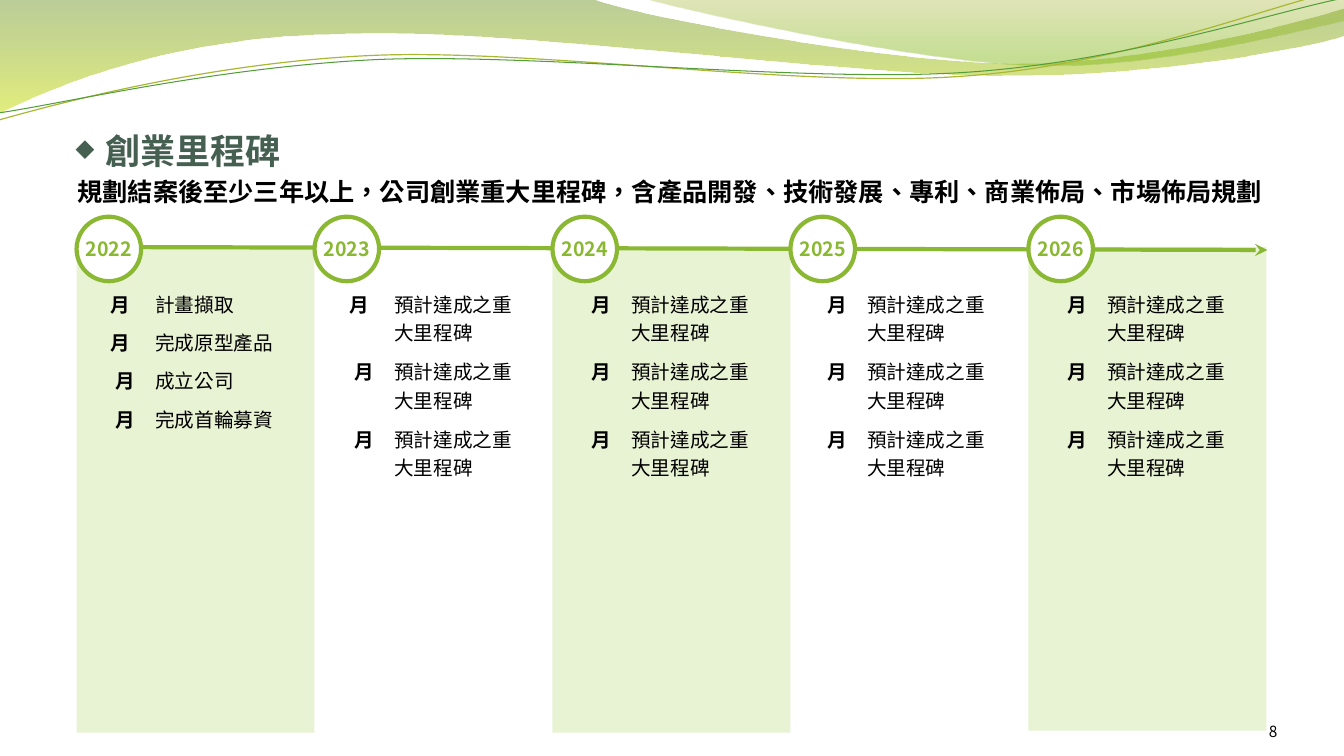
from lxml.etree import SubElement
from pptx import Presentation
from pptx.dml.color import RGBColor
from pptx.enum.shapes import MSO_CONNECTOR, MSO_SHAPE
from pptx.enum.text import MSO_ANCHOR, PP_ALIGN
from pptx.oxml.ns import qn
from pptx.util import Emu, Pt

EMU_PER_PX = 9144
FONT = "Noto Sans CJK SC"
LANGUAGE = "zh-TW"
NO_GRID_STYLE = "{2D5ABB26-0587-4C30-8999-92F81FD0307C}"
COLORS = {
    "title": "455F51", "text": "000000", "accent": "8AB833", "white": "FFFFFF",
    "band": "E8F3D4", "olive": "69921C", "lime": "CCE10F", "moss": "9BAA1A",
    "leaf": "81BA16", "gold_line": "A9B733", "green_line": "549E39",
}
LEFT, COLUMN_PITCH, CIRCLE_SIZE = 76, 236, 64
TABLE_ROWS, ROW_HEIGHT, TALL_ROW_HEIGHT, TABLE_COLUMNS = 8, 38, 67, (68, 153)
GOAL = "預計達成之重大里程碑"
MILESTONES = [
    ("2022", 76, [("月 ", "計畫擷取"), ("月 ", "完成原型產品"),
                  ("月", "成立公司"), ("月", "完成首輪募資")]),
    ("2023", 313, [("月 ", GOAL), ("月", GOAL), ("月", GOAL)]),
    ("2024", 548, [("月", GOAL)] * 3),
    ("2025", 782, [("月", GOAL)] * 3),
    ("2026", 1020, [("月", GOAL)] * 3),
]
BROAD_WAVE = [
    [(0, 0)], [(587, -1)], [(634, 17), (884, 63), (1011, 63)],
    [(1137, 63), (1277, 26), (1333, 9)], [(1334, 36)],
    [(1311, 44), (1159, 76), (994, 75)], [(829, 75), (509, 28), (343, 34)],
    [(172, 36), (61, 83), (-2, 113)],
]
RIGHT_WAVE = [
    [(638, -1)], [(679, 11), (909, 62), (1025, 65)],
    [(1140, 69), (1282, 32), (1333, 21)], [(1333, 0)],
]
GOLD_WAVE = [
    [(-1, 119)], [(63, 101), (210, 62), (369, 55)],
    [(527, 48), (789, 87), (949, 76)], [(1110, 66), (1251, 8), (1330, -10)],
]
GREEN_WAVE = [
    [(-1, 112)], [(62, 103), (218, 66), (377, 59)],
    [(537, 53), (796, 82), (955, 72)], [(1114, 62), (1255, 14), (1333, -2)],
]


def px(*lengths):
    """Convert pixel lengths to EMU."""
    return [Emu(length * EMU_PER_PX) for length in lengths]


def color(name):
    """Return a named colour."""
    return RGBColor.from_string(COLORS[name])


def bend(shape, segments):
    """Merge the lines of each three-point segment into one cubic curve."""
    lines = iter(list(shape._element.iter(qn("a:lnTo"))))
    for segment in segments:
        first, *others = [next(lines) for _ in segment]
        if others:
            first.tag = qn("a:cubicBezTo")
            for line in others:
                first.append(line[0])
                line.getparent().remove(line)


def add_wave(slide, segments, closed):
    """Draw a wave outline without a shadow."""
    start, *rest = [px(*point) for segment in segments for point in segment]
    builder = slide.shapes.build_freeform(*start)
    builder.add_line_segments(rest, close=closed)
    shape = builder.convert_to_shape()
    bend(shape, segments[1:])
    shape.shadow.inherit = False
    return shape


def add_filled_wave(slide, segments, stops):
    """Draw a wave with a translucent downward gradient."""
    shape = add_wave(slide, segments, True)
    shape.line.fill.background()
    shape.fill.gradient()
    shape.fill.gradient_angle = 270
    for stop, (position, name, _) in zip(shape.fill.gradient_stops, stops):
        stop.position = position
        stop.color.rgb = color(name)
    gradient = shape._element.spPr.find(qn("a:gradFill"))
    for element, (_, _, opacity) in zip(gradient.iter(qn("a:srgbClr")), stops):
        SubElement(element, qn("a:alpha"), val=str(opacity * 1000))


def add_line_wave(slide, segments, name, width):
    """Draw a thin open wave."""
    shape = add_wave(slide, segments, False)
    shape.fill.background()
    shape.line.color.rgb = color(name)
    shape.line.width = Pt(width)


def write(frame, text, size, name="text", bold=False, align=PP_ALIGN.LEFT, font=FONT):
    """Fill the first paragraph of a text frame and style it."""
    paragraph = frame.paragraphs[0]
    paragraph.text = text
    paragraph.alignment = align
    paragraph.font.size = Pt(size)
    paragraph.font.bold = bold
    paragraph.font.name = font
    paragraph.font.color.rgb = color(name)
    properties = paragraph._p.get_or_add_pPr()
    defaults = properties.find(qn("a:defRPr"))
    defaults.set("lang", LANGUAGE)
    SubElement(defaults, qn("a:ea"), typeface=font)
    for run in paragraph.runs:
        run._r.get_or_add_rPr().set("lang", LANGUAGE)
    return properties


def add_text(slide, box, anchor, insets, *content, **style):
    """Add a wrapping text box and return its paragraph properties."""
    frame = slide.shapes.add_textbox(*px(*box)).text_frame
    frame.word_wrap = True
    frame.vertical_anchor = anchor
    (frame.margin_left, frame.margin_top,
     frame.margin_right, frame.margin_bottom) = px(*insets)
    return write(frame, *content, **style)


def add_title(slide):
    """Add the heading with its diamond bullet."""
    properties = add_text(slide, (67, 45, 1200, 125), MSO_ANCHOR.BOTTOM, (0, 5, 0, 0),
                          "創業里程碑", 25, "title", bold=True)
    margin, hanging = px(38, -30)
    properties.set("marL", str(margin))
    properties.set("indent", str(hanging))
    defaults = properties.find(qn("a:defRPr"))
    for tag, attributes in (("a:buSzPct", {"val": "70000"}), ("a:buChar", {"char": "◆"})):
        defaults.addprevious(SubElement(properties, qn(tag), attributes))


def add_plain_shape(slide, kind, box, fill):
    """Add a filled preset shape without line or shadow."""
    shape = slide.shapes.add_shape(kind, *px(*box))
    shape.shadow.inherit = False
    shape.fill.solid()
    shape.fill.fore_color.rgb = color(fill)
    shape.line.fill.background()
    return shape


def add_arrow(slide):
    """Add the timeline arrow."""
    arrow = slide.shapes.add_connector(MSO_CONNECTOR.STRAIGHT, *px(LEFT, 245, 1257, 248))
    arrow.line.color.rgb = color("accent")
    arrow.line.width = Pt(3)
    SubElement(arrow.line._get_or_add_ln(), qn("a:tailEnd"), type="stealth")
    SubElement(arrow._element.spPr, qn("a:effectLst"))


def add_year(slide, left, year):
    """Add a ringed year on the timeline."""
    circle = add_plain_shape(slide, MSO_SHAPE.OVAL,
                             (left, 215, CIRCLE_SIZE, CIRCLE_SIZE), "white")
    circle.line.color.rgb = color("accent")
    circle.line.width = Pt(3)
    circle.text_frame.word_wrap = False
    circle.text_frame.vertical_anchor = MSO_ANCHOR.MIDDLE
    write(circle.text_frame, year, 14, "accent", bold=True, align=PP_ALIGN.CENTER)


def add_milestones(slide, left, entries):
    """Add a table of months and milestones."""
    frame = slide.shapes.add_table(TABLE_ROWS, 2, *px(
        left, 282, sum(TABLE_COLUMNS), TABLE_ROWS * ROW_HEIGHT))
    table = frame.table
    table.first_row = table.horz_banding = False
    table._tbl.tblPr.find(qn("a:tableStyleId")).text = NO_GRID_STYLE
    for column, width in zip(table.columns, px(*TABLE_COLUMNS)):
        column.width = width
    for cell in table.iter_cells():
        cell.fill.background()
        SubElement(cell.text_frame.paragraphs[0]._p, qn("a:endParaRPr"), sz="1400")
    for row, (month, goal) in enumerate(entries):
        if goal == GOAL:
            table.rows[row].height = px(TALL_ROW_HEIGHT)[0]
        write(table.cell(row, 0).text_frame, month, 14, bold=True, align=PP_ALIGN.RIGHT)
        write(table.cell(row, 1).text_frame, goal, 14)


def main():
    """Build and save the milestone slide."""
    presentation = Presentation()
    presentation.slide_width, presentation.slide_height = px(1333, 750)
    slide = presentation.slides.add_slide(presentation.slide_layouts[6])
    add_filled_wave(slide, BROAD_WAVE, [(0, "olive", 45), (1, "lime", 55)])
    add_filled_wave(slide, RIGHT_WAVE, [(0, "moss", 30), (0.8, "leaf", 45)])
    add_line_wave(slide, GOLD_WAVE, "gold_line", 0.85)
    add_line_wave(slide, GREEN_WAVE, "green_line", 0.75)
    add_title(slide)
    add_text(slide, (67, 170, 1200, 556), MSO_ANCHOR.TOP, (10, 5, 10, 5),
             "規劃結案後至少三年以上，公司創業重大里程碑，含產品開發、技術發展、專利、商業佈局、市場佈局規劃",
             18, bold=True)
    for column, top in ((4, 245), (2, 247), (0, 247)):
        add_plain_shape(slide, MSO_SHAPE.RECTANGLE,
                        (LEFT + column * COLUMN_PITCH, top, COLUMN_PITCH, 480), "band")
    add_arrow(slide)
    for column, (year, _, _) in enumerate(MILESTONES):
        add_year(slide, LEFT + column * COLUMN_PITCH, year)
    for _, left, entries in MILESTONES:
        add_milestones(slide, left, entries)
    add_text(slide, (1156, 695, 111, 40), MSO_ANCHOR.BOTTOM, (0, 0, 0, 0),
             "8", 11, align=PP_ALIGN.RIGHT, font="Noto Sans CJK TC")
    presentation.save("out.pptx")


if __name__ == "__main__":
    main()
